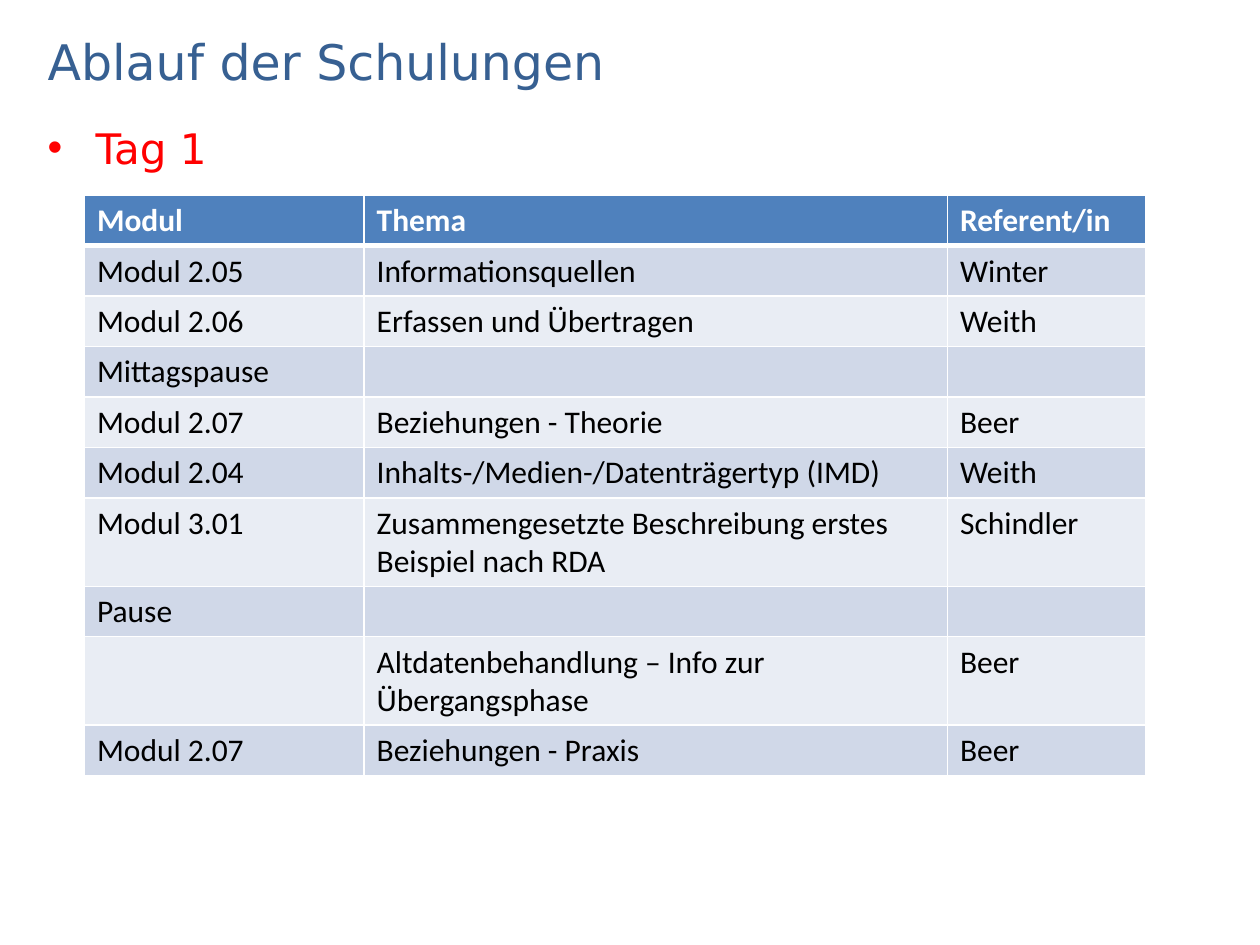
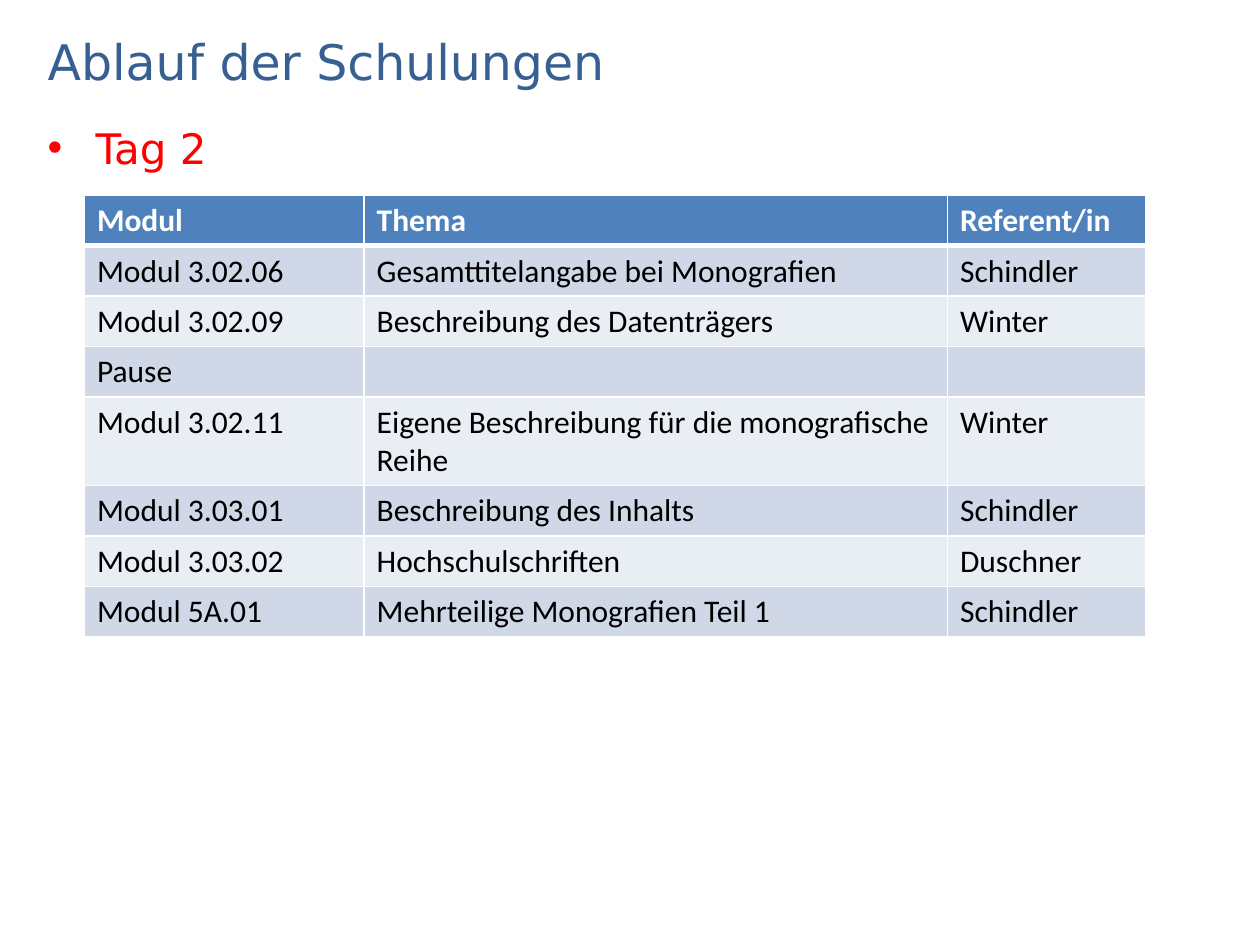
from dataclasses import dataclass

from lxml.etree import SubElement
from pptx import Presentation
from pptx.dml.color import RGBColor
from pptx.enum.text import MSO_ANCHOR
from pptx.oxml.ns import qn
from pptx.util import Inches, Pt


@dataclass(frozen=True)
class Theme:
    heading_font: str = "DejaVu Sans"
    table_font: str = "Calibri"
    title_size: int = 28
    day_size: int = 24
    table_size: int = 18
    title_color: str = "376092"
    day_color: str = "FF0000"
    header_fill: str = "4F81BD"
    header_text: str = "FFFFFF"
    band_fills: tuple = ("D0D8E8", "E9EDF4")
    body_text: str = "000000"
    rule_color: str = "FFFFFF"
    rule_width: int = 1
    header_rule_width: int = 3


THEME = Theme()
TITLE = "Ablauf der Schulungen"
HEADINGS = ("Modul", "Thema", "Referent/in")
COLUMN_WIDTHS = (2.22, 4.63, 1.57)
ROW_HEIGHT = 0.4
MARGIN_LEFT, CONTENT_WIDTH = 0.28, 9.45

SCHEDULE = {
    "Tag 1": [
        ("Modul 2.05", "Informationsquellen", "Winter"),
        ("Modul 2.06", "Erfassen und Übertragen", "Weith"),
        ("Mittagspause", "", ""),
        ("Modul 2.07", "Beziehungen - Theorie", "Beer"),
        ("Modul 2.04", "Inhalts-/Medien-/Datenträgertyp (IMD)", "Weith"),
        ("Modul 3.01", "Zusammengesetzte Beschreibung erstes Beispiel nach RDA", "Schindler"),
        ("Pause", "", ""),
        ("", "Altdatenbehandlung – Info zur Übergangsphase", "Beer"),
        ("Modul 2.07", "Beziehungen - Praxis", "Beer"),
    ],
    "Tag 2": [
        ("Modul 3.02.06", "Gesamttitelangabe bei Monografien", "Schindler"),
        ("Modul 3.02.09", "Beschreibung des Datenträgers", "Winter"),
        ("Pause", "", ""),
        ("Modul 3.02.11", "Eigene Beschreibung für die monografische Reihe", "Winter"),
        ("Modul 3.03.01", "Beschreibung des Inhalts", "Schindler"),
        ("Modul 3.03.02", "Hochschulschriften", "Duschner"),
        ("Modul 5A.01", "Mehrteilige Monografien Teil 1", "Schindler"),
    ],
}


def write_text(frame, text, *, font, size, color, bold=False):
    """Fill the first paragraph of a text frame and return it."""
    frame.word_wrap = True
    paragraph = frame.paragraphs[0]
    style = paragraph.font
    if text:
        run = paragraph.add_run()
        run.text = text
        style = run.font
    style.name = font
    style.size = Pt(size)
    style.bold = bold
    style.color.rgb = RGBColor.from_string(color)
    return paragraph


def add_heading(slide, text, top, height, anchor, **text_format):
    box = slide.shapes.add_textbox(
        Inches(MARGIN_LEFT), Inches(top), Inches(CONTENT_WIDTH), Inches(height))
    box.text_frame.vertical_anchor = anchor
    return write_text(box.text_frame, text, font=THEME.heading_font, **text_format)


def add_bullet(paragraph, indent):
    properties = paragraph._p.get_or_add_pPr()
    properties.set("marL", str(Inches(indent)))
    properties.set("indent", str(-Inches(indent)))
    SubElement(properties, qn("a:buFont"), typeface="Arial")
    SubElement(properties, qn("a:buChar"), char="•")


def set_borders(cell, top, bottom):
    """Draw all four cell borders; top and bottom widths are in points."""
    properties = cell._tc.get_or_add_tcPr()
    side = THEME.rule_width
    for edge, width in (("L", side), ("R", side), ("T", top), ("B", bottom)):
        line = SubElement(properties, qn(f"a:ln{edge}"), w=str(Pt(width)))
        fill = SubElement(line, qn("a:solidFill"))
        SubElement(fill, qn("a:srgbClr"), val=THEME.rule_color)


def add_schedule(slide, sessions):
    rows = [HEADINGS, *sessions]
    table = slide.shapes.add_table(
        len(rows), len(HEADINGS), Inches(0.67), Inches(1.55),
        Inches(sum(COLUMN_WIDTHS)), Inches(ROW_HEIGHT * len(rows))).table
    for column, width in zip(table.columns, COLUMN_WIDTHS):
        column.width = Inches(width)
    for row_index, entries in enumerate(rows):
        is_header = row_index == 0
        fill = THEME.header_fill if is_header else THEME.band_fills[(row_index - 1) % 2]
        top = THEME.header_rule_width if row_index == 1 else THEME.rule_width
        bottom = THEME.header_rule_width if is_header else THEME.rule_width
        for column_index, entry in enumerate(entries):
            cell = table.cell(row_index, column_index)
            set_borders(cell, top, bottom)
            cell.fill.solid()
            cell.fill.fore_color.rgb = RGBColor.from_string(fill)
            write_text(cell.text_frame, entry, font=THEME.table_font,
                       size=THEME.table_size, bold=is_header,
                       color=THEME.header_text if is_header else THEME.body_text)


def add_day_slide(deck, day, sessions):
    slide = deck.slides.add_slide(deck.slide_layouts[6])
    add_heading(slide, TITLE, 0.2, 0.56, MSO_ANCHOR.MIDDLE,
                size=THEME.title_size, color=THEME.title_color)
    day_line = add_heading(slide, day, 0.92, 5.98, MSO_ANCHOR.TOP,
                           size=THEME.day_size, color=THEME.day_color)
    day_line.space_before = Pt(1.5)
    add_bullet(day_line, 0.38)
    add_schedule(slide, sessions)


def main():
    deck = Presentation()
    deck.slide_width, deck.slide_height = Inches(10), Inches(7.5)
    for day, sessions in SCHEDULE.items():
        add_day_slide(deck, day, sessions)
    deck.save("out.pptx")


if __name__ == "__main__":
    main()
